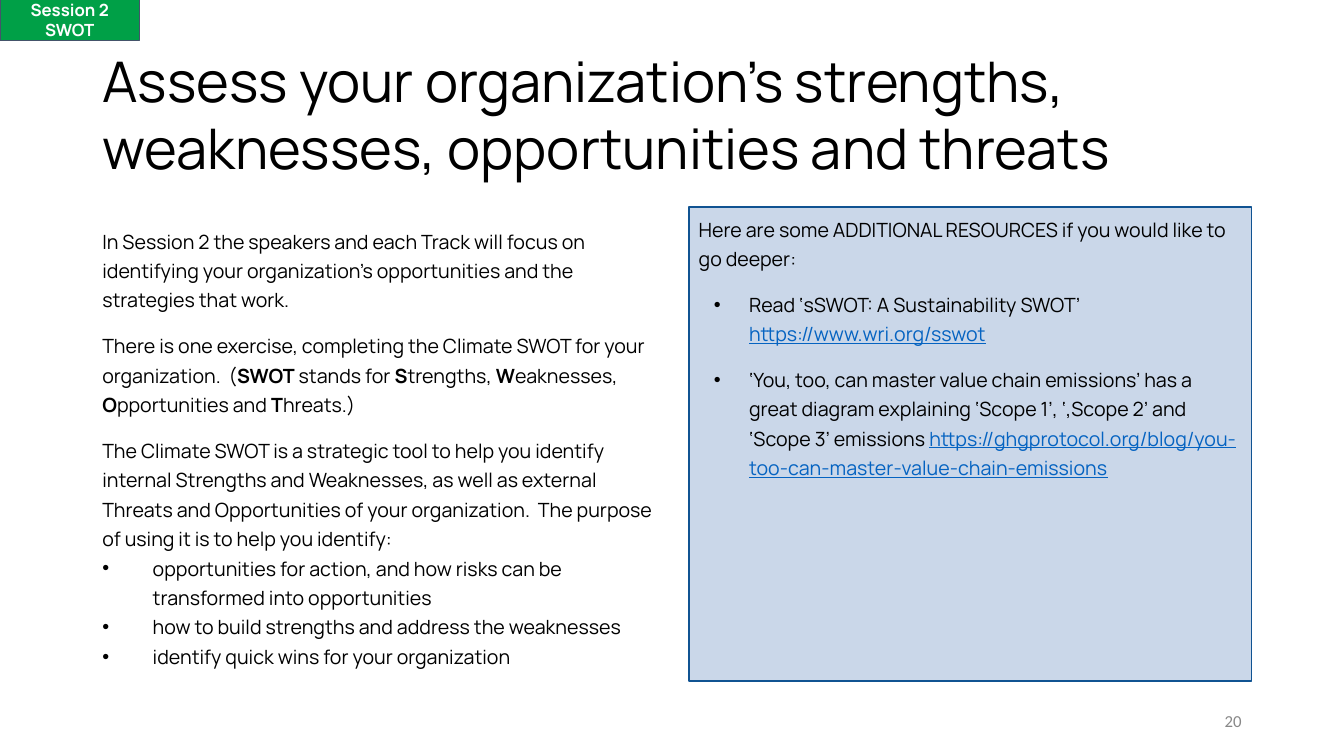
"""Build the Session 2 SWOT slide."""
from dataclasses import dataclass
from typing import Optional

from lxml import etree
from pptx import Presentation
from pptx import util as u
from pptx.dml.color import RGBColor
from pptx.enum import shapes, text
from pptx.oxml import ns

BLACK = RGBColor(0x00, 0x00, 0x00)
WHITE = RGBColor(0xFF, 0xFF, 0xFF)
GREY = RGBColor(0x88, 0x88, 0x88)
GREEN = RGBColor(0x00, 0xA0, 0x47)
SLATE = RGBColor(0x44, 0x54, 0x6A)
PALE_BLUE = RGBColor(0x97, 0xB1, 0xD5)
NAVY = RGBColor(0x10, 0x53, 0x92)
LINK = RGBColor(0x05, 0x63, 0xC1)

WIDTH, HEIGHT = u.Inches(13.33), u.Inches(7.5)
COL, ROW = WIDTH / 160, HEIGHT / 150
LEFT = text.PP_ALIGN.LEFT
CENTER = text.PP_ALIGN.CENTER
RIGHT = text.PP_ALIGN.RIGHT
TOP = text.MSO_ANCHOR.TOP
MIDDLE = text.MSO_ANCHOR.MIDDLE


@dataclass
class Para:
    """A paragraph: asterisks enclose bold words or links."""
    words: str
    before: float = 0
    hang: float = 0


@dataclass
class Block:
    """A text block placed in grid columns and rows."""
    col: float
    row: float
    cols: float
    rows: float
    paras: list[Para]
    size: float = 14
    spacing: float = 1
    font: str = "Manrope"
    color: RGBColor = BLACK
    bold: bool = False
    align: text.PP_ALIGN = LEFT
    anchor: text.MSO_ANCHOR = TOP
    fill: Optional[RGBColor] = None
    opacity: int = 100
    line: Optional[RGBColor] = None
    line_width: float = 1.25


BLOCKS = [
    Block(11, 8, 138, 29, [
        Para("Assess your organization’s strengths, weaknesses, opportunities and threats"),
    ], size=40, anchor=MIDDLE),
    Block(11, 43.4, 68, 95.6, [
        Para("In Session 2 the speakers and each Track will focus on identifying your "
             "organization’s opportunities and the strategies that work."),
        Para("There is one exercise, completing the Climate SWOT for your organization.  "
             "(*SWOT* stands for *S*trengths, *W*eaknesses, *O*pportunities and *T*hreats.)",
             before=11.7),
        Para("The Climate SWOT is a strategic tool to help you identify internal Strengths "
             "and Weaknesses, as well as external Threats and Opportunities of your "
             "organization.  The purpose of using it is to help you identify:", before=11.7),
        Para("opportunities for action, and how risks can be transformed into opportunities",
             hang=0.5),
        Para("how to build strengths and address the weaknesses", hang=0.5),
        Para("identify quick wins for your organization", hang=0.5),
    ], spacing=1.25),
    Block(113, 139, 36, 8, [Para("20")], size=12, font="Calibri",
          color=GREY, align=RIGHT, anchor=MIDDLE),
    Block(0, 0, 16.6, 8, [Para("Session 2"), Para("SWOT")], size=12,
          color=WHITE, bold=True, align=CENTER, anchor=MIDDLE,
          fill=GREEN, line=SLATE, line_width=0.75),
    Block(82, 41, 67, 94.2, [
        Para("Here are some ADDITIONAL RESOURCES if you would like to go deeper:"),
        Para("Read ‘sSWOT: A Sustainability SWOT’ *https://www.wri.org/sswot*",
             before=11.7, hang=0.35),
        Para("‘You, too, can master value chain emissions’ has a great diagram explaining "
             "‘Scope 1’, ‘,Scope 2’ and ‘Scope 3’ emissions "
             "*https://ghgprotocol.org/blog/you-too-can-master-value-chain-emissions*",
             before=11.7, hang=0.35),
    ], spacing=1.25, fill=PALE_BLUE, opacity=50, line=NAVY),
]


def add_bullet(p, hang: float) -> None:
    """Hang a round bullet before text indented by half an inch."""
    pPr = p._p.get_or_add_pPr()
    pPr.set("marL", str(u.Inches(0.5)))
    pPr.set("indent", str(-u.Inches(hang)))
    etree.SubElement(pPr, ns.qn("a:buFont")).set("typeface", "Arial")
    etree.SubElement(pPr, ns.qn("a:buChar")).set("char", "•")


def write_para(p, para: Para, block: Block) -> None:
    """Fill one paragraph with its plain, bold and link runs."""
    if para.hang:
        add_bullet(p, para.hang)
    p.alignment = block.align
    p.line_spacing = block.spacing
    p.space_before = u.Pt(para.before)
    for i, words in enumerate(para.words.split("*")):
        if not words:
            continue
        r = p.add_run()
        r.text = words
        link = words.startswith("https://")
        r.font.name = block.font
        r.font.size = u.Pt(block.size)
        r.font.bold = block.bold or (i % 2 == 1 and not link)
        r.font.underline = link
        r.font.color.rgb = LINK if link else block.color


def paint(sp, block: Block) -> None:
    """Set the fill, its opacity and the outline of a box."""
    sp.shadow.inherit = False
    sp.fill.solid()
    sp.fill.fore_color.rgb = block.fill
    if block.opacity < 100:
        clr = sp._element.spPr.find(ns.qn("a:solidFill"))[0]
        etree.SubElement(clr, ns.qn("a:alpha")).set("val", str(block.opacity * 1000))
    sp.line.color.rgb = block.line
    sp.line.width = u.Pt(block.line_width)


def draw(s, block: Block) -> None:
    """Draw a block as a painted rectangle or a plain text box."""
    box = (round(block.col * COL), round(block.row * ROW),
           round(block.cols * COL), round(block.rows * ROW))
    if block.fill is None:
        sp = s.shapes.add_textbox(*box)
    else:
        sp = s.shapes.add_shape(shapes.MSO_SHAPE.RECTANGLE, *box)
        paint(sp, block)
    tf = sp.text_frame
    tf.word_wrap = True
    tf.vertical_anchor = block.anchor
    for i, para in enumerate(block.paras):
        write_para(tf.add_paragraph() if i else tf.paragraphs[0], para, block)


def main() -> None:
    """Create and save the slide."""
    prs = Presentation()
    prs.slide_width, prs.slide_height = WIDTH, HEIGHT
    s = prs.slides.add_slide(prs.slide_layouts[6])
    for block in BLOCKS:
        draw(s, block)
    prs.save("out.pptx")


if __name__ == "__main__":
    main()
